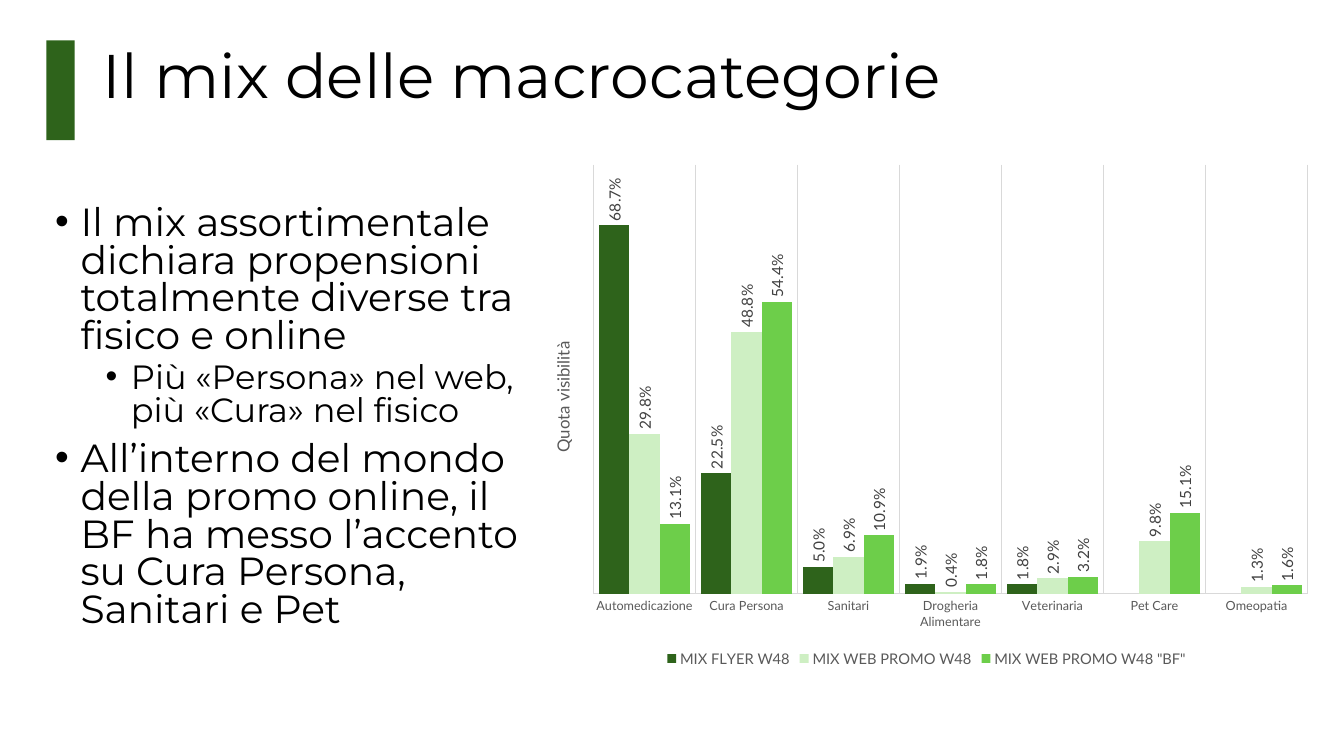
from dataclasses import dataclass

from lxml import etree
from pptx import Presentation
from pptx.chart.data import CategoryChartData
from pptx.dml.color import RGBColor
from pptx.enum.chart import (
    XL_CHART_TYPE, XL_LABEL_POSITION, XL_LEGEND_POSITION, XL_TICK_MARK)
from pptx.enum.shapes import MSO_SHAPE
from pptx.enum.text import MSO_ANCHOR, MSO_AUTO_SIZE, PP_ALIGN
from pptx.oxml import parse_xml
from pptx.oxml.ns import nsdecls, qn
from pptx.util import Cm, Pt

COLUMNS = XL_CHART_TYPE.COLUMN_CLUSTERED
OUTSIDE = XL_LABEL_POSITION.OUTSIDE_END
BOTTOM = XL_LEGEND_POSITION.BOTTOM
NO_TICK = XL_TICK_MARK.NONE
RECT = MSO_SHAPE.RECTANGLE
TOP = MSO_ANCHOR.TOP
NO_FIT = MSO_AUTO_SIZE.NONE
LEFT = PP_ALIGN.LEFT


@dataclass(frozen=True)
class Theme:
    text_font: str = "Montserrat"
    chart_font: str = "Lato"
    ink: str = "000000"
    bar: str = "2E631B"
    label: str = "404040"
    axis: str = "595959"
    grid: str = "D9D9D9"
    series: tuple = ("2E631B", "CEEFC3", "6DCE4A")
    title_size: float = 44
    body_sizes: tuple = (28, 24)
    chart_size: float = 10
    cat_size: float = 9
    legend_size: float = 10.5
    label_size: float = 11
    axis_size: float = 12


THEME = Theme()
PERCENT = "0.0%"

POINTS = (
    (0, "Il mix assortimentale dichiara propensioni totalmente diverse "
        "tra fisico e online"),
    (1, "Più «Persona» nel web, più «Cura» nel fisico"),
    (0, "All’interno del mondo della promo online, il BF ha messo l’accento "
        "su Cura Persona, Sanitari e Pet"),
)
GROUPS = ("Automedicazione", "Cura Persona", "Sanitari",
          "Drogheria Alimentare", "Veterinaria", "Pet Care", "Omeopatia")
MIXES = {
    "MIX FLYER W48": (0.687, 0.225, 0.05, 0.019, 0.018, None, None),
    "MIX WEB PROMO W48": (0.298, 0.488, 0.069, 0.004, 0.029, 0.098, 0.013),
    'MIX WEB PROMO W48 "BF"':
        (0.131, 0.544, 0.109, 0.018, 0.032, 0.151, 0.016),
}


def set_font(font, size, color, name=THEME.chart_font):
    font.name = name
    font.size = Pt(size)
    font.bold = False
    font.color.rgb = RGBColor.from_string(color)


def add_text(para, text, *, size, color=THEME.ink, font=THEME.text_font,
             spacing=None, before=0):
    para.alignment = LEFT
    para.line_spacing = spacing
    para.space_before = Pt(before)
    run = para.add_run()
    run.text = text
    set_font(run.font, size, color, font)


def add_bullet(para, level):
    para.level = level
    props = para._p.get_or_add_pPr()
    props.set("marL", str(Cm(0.64 + 1.27 * level)))
    props.set("indent", str(Cm(-0.64)))
    face = etree.SubElement(props, qn("a:buFont"))
    face.set("typeface", "Arial")
    etree.SubElement(props, qn("a:buChar")).set("char", "•")


def turn(body):
    """Make chart text read upwards."""
    body.set("rot", "-5400000")
    body.set("vert", "horz")


def set_frame(frame):
    frame.word_wrap = True
    frame.auto_size = NO_FIT
    frame.vertical_anchor = TOP


def add_title(slide, text):
    bar = slide.shapes.add_shape(RECT, Cm(1.17), Cm(1.02), Cm(0.71), Cm(2.51))
    bar.shadow.inherit = False
    bar.fill.solid()
    bar.fill.fore_color.rgb = RGBColor.from_string(THEME.bar)
    bar.line.fill.background()
    title = slide.shapes.title
    title.left, title.top = Cm(2.34), Cm(1.02)
    title.width, title.height = Cm(29.21), Cm(3.68)
    set_frame(title.text_frame)
    add_text(title.text_frame.paragraphs[0], text,
             size=THEME.title_size, spacing=0.9)


def add_points(slide, points):
    box = slide.shapes.add_textbox(Cm(1.14), Cm(5.08), Cm(12.47), Cm(12.09))
    frame = box.text_frame
    set_frame(frame)
    for i, (level, text) in enumerate(points):
        para = frame.add_paragraph() if i else frame.paragraphs[0]
        add_bullet(para, level)
        before = (10, 5)[level] if i else 0
        add_text(para, text, size=THEME.body_sizes[level],
                 spacing=0.8, before=before)


def style_series(series, color):
    series.format.fill.solid()
    series.format.fill.fore_color.rgb = RGBColor.from_string(color)
    series.invert_if_negative = False
    labels = series.data_labels
    labels.show_value = True
    labels.position = OUTSIDE
    labels.number_format = PERCENT
    labels.number_format_is_linked = False
    set_font(labels.font, THEME.label_size, THEME.label)
    turn(labels._element.find(qn("c:txPr")).find(qn("a:bodyPr")))


def style_axes(chart):
    cats, vals = chart.category_axis, chart.value_axis
    cats.major_tick_mark = NO_TICK
    cats.has_major_gridlines = True
    for line in (cats.format.line, cats.major_gridlines.format.line):
        line.color.rgb = RGBColor.from_string(THEME.grid)
        line.width = Pt(0.75)
    set_font(cats.tick_labels.font, THEME.cat_size, THEME.axis)
    vals.minimum_scale, vals.maximum_scale = 0, 0.8
    vals.has_major_gridlines = False
    vals.tick_labels.number_format = PERCENT
    vals.tick_labels.number_format_is_linked = False
    vals.visible = False
    frame = vals.axis_title.text_frame
    add_text(frame.paragraphs[0], "Quota visibilità", size=THEME.axis_size,
             color=THEME.axis, font=THEME.chart_font)
    turn(frame._txBody.bodyPr)


def place_plot(chart, **area):
    """Fix the inner plot area as shares of the chart."""
    sizes = "".join(f'<c:{key} val="{val}"/>' for key, val in area.items())
    layout = parse_xml(
        f'<c:layout {nsdecls("c")}><c:manualLayout>'
        '<c:layoutTarget val="inner"/><c:xMode val="edge"/>'
        f'<c:yMode val="edge"/>{sizes}</c:manualLayout></c:layout>')
    plot = chart._chartSpace.chart.plotArea
    for old in plot.findall(qn("c:layout")):
        plot.remove(old)
    plot.insert(0, layout)


def add_mix(slide):
    data = CategoryChartData(number_format=PERCENT)
    data.categories = GROUPS
    for name, vals in MIXES.items():
        data.add_series(name, vals)
    chart = slide.shapes.add_chart(
        COLUMNS, Cm(13.36), Cm(3.89), Cm(19.99), Cm(13.03), data).chart
    set_font(chart.font, THEME.chart_size, THEME.ink)
    chart.has_title = False
    chart.has_legend = True
    chart.legend.position = BOTTOM
    chart.legend.include_in_layout = False
    set_font(chart.legend.font, THEME.legend_size, THEME.axis)
    plot = chart.plots[0]
    plot.gap_width, plot.overlap = 36, 0
    plot.vary_by_categories = False
    for series, color in zip(plot.series, THEME.series):
        style_series(series, color)
    style_axes(chart)
    place_plot(chart, x=0.08, y=0.02, w=0.9, h=0.83)


def main():
    deck = Presentation()
    deck.slide_width, deck.slide_height = Cm(33.87), Cm(19.05)
    slide = deck.slides.add_slide(deck.slide_layouts.get_by_name("Title Only"))
    add_title(slide, "Il mix delle macrocategorie")
    add_points(slide, POINTS)
    add_mix(slide)
    deck.save("out.pptx")


if __name__ == "__main__":
    main()
